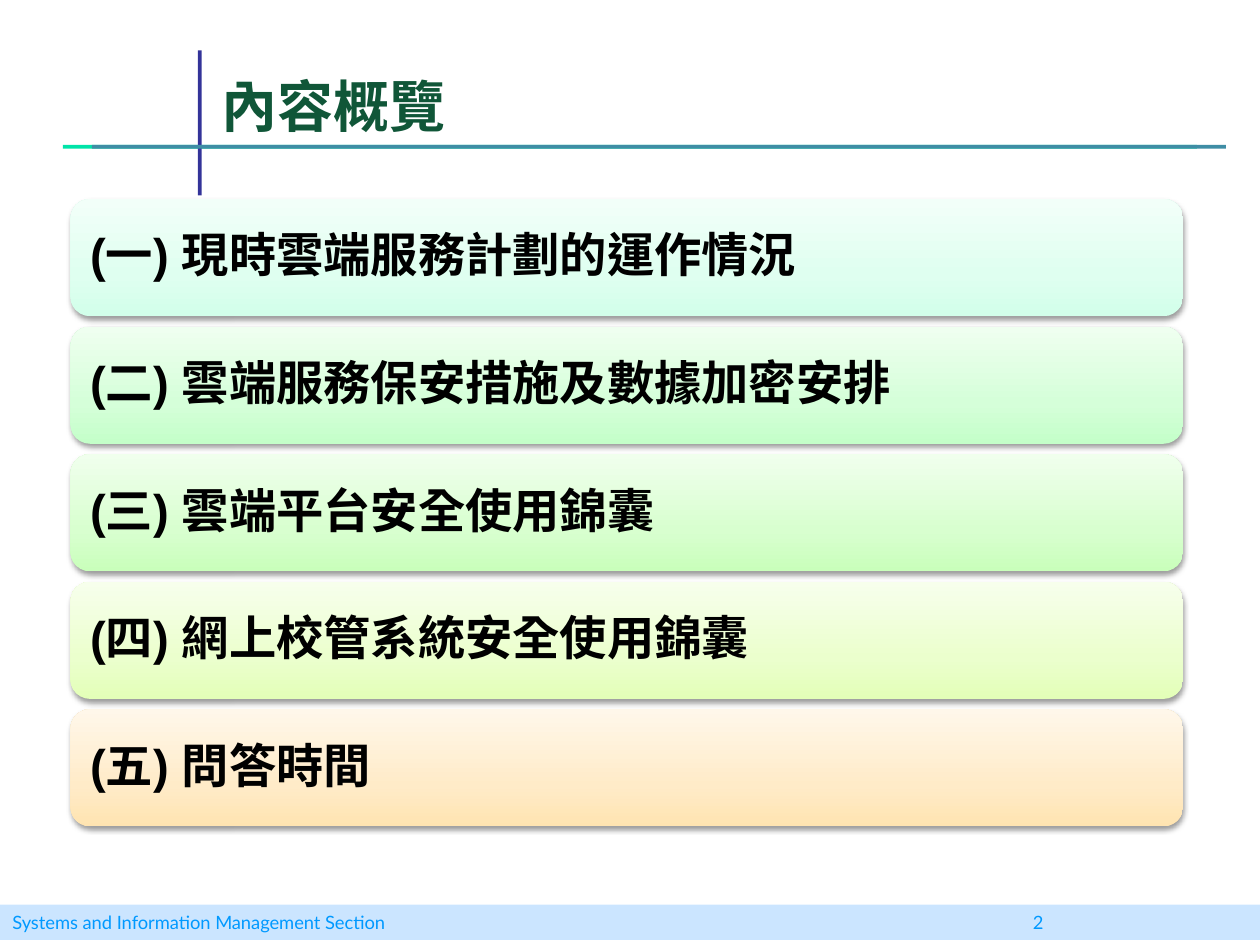
from lxml import etree
from pptx import Presentation
from pptx.dml.color import RGBColor
from pptx.enum.lang import MSO_LANGUAGE_ID as Language
from pptx.enum.shapes import MSO_SHAPE as Shape
from pptx.enum.text import MSO_ANCHOR as Anchor, PP_ALIGN as Align
from pptx.oxml import parse_xml
from pptx.oxml.ns import nsdecls, qn
from pptx.util import Inches, Pt

COLORS = {
    "green": "00E4A8", "indigo": "333399", "teal": "3F8DA5",
    "footer": "99CCFF", "footer_text": "0099FF",
    "title": "105638", "text": "000000", "shadow": "000000",
}
TITLE = "內容概覽"
FOOTER = "Systems and Information Management Section"
PAGE_NUMBER = "2"
NUMBER_TAB = 8.1

# Topic, then its gradient from the bottom edge to the top edge
TOPICS = [
    ("(一) 現時雲端服務計劃的運作情況", ("D2FFEA", "DFFFF0", "F2FFF9")),
    ("(二) 雲端服務保安措施及數據加密安排", ("C4FFC9", "D5FFD9", "EFFFF0")),
    ("(三) 雲端平台安全使用錦囊", ("C9FFBB", "D8FFCF", "F0FFED")),
    ("(四) 網上校管系統安全使用錦囊", ("E3FFB8", "EBFFCD", "F7FFEC")),
    ("(五) 問答時間", ("FFE4B1", "FFEBC8", "FFF7EA")),
]
STOPS = (0, 35, 100)
BAR_LEFT, BAR_WIDTH, BAR_HEIGHT = 0.56, 8.83, 0.93
FIRST_TOP, LAST_TOP = 1.58, 5.63

# Left, top, width, height, colour
RULES = [
    (0.5, 1.15, 9, 0.03, "green"),
    (1.57, 0.4, 0.03, 1.15, "indigo"),
    (0.73, 1.15, 9, 0.03, "teal"),
]


def add_block(page, kind, left, top, width, height, color=None):
    block = page.shapes.add_shape(
        kind, Inches(left), Inches(top), Inches(width), Inches(height))
    block.shadow.inherit = False
    block.line.fill.background()
    if color:
        block.fill.solid()
        block.fill.fore_color.rgb = RGBColor.from_string(COLORS[color])
    return block


def write(box, text, size, color, font="Arial", bold=False, anchor=Anchor.MIDDLE,
          inset=(0.1, 0.05), spacing=None, language=None):
    frame = box.text_frame
    frame.word_wrap = True
    frame.vertical_anchor = anchor
    frame.margin_left = frame.margin_right = Inches(inset[0])
    frame.margin_top = frame.margin_bottom = Inches(inset[1])
    para = frame.paragraphs[0]
    para.alignment = Align.LEFT
    para.line_spacing = spacing
    span = para.add_run()
    span.text = text
    span.font.name = font
    span.font.size = Pt(size)
    span.font.bold = bold
    span.font.color.rgb = RGBColor.from_string(COLORS[color])
    if language:
        span.font.language_id = language
    return para


def add_tab_stop(para, position):
    tabs = etree.SubElement(para._p.get_or_add_pPr(), qn("a:tabLst"))
    etree.SubElement(tabs, qn("a:tab"), pos=str(Inches(position)), algn="l")


def add_gradient(shape, colors):
    stops = "".join(
        f'<a:gs pos="{stop * 1000}"><a:srgbClr val="{color}"/></a:gs>'
        for stop, color in zip(STOPS, colors))
    gradient = parse_xml(
        f'<a:gradFill {nsdecls("a")} rotWithShape="1"><a:gsLst>{stops}</a:gsLst>'
        '<a:lin ang="16200000" scaled="0"/></a:gradFill>')
    shape._element.spPr.find(qn("a:prstGeom")).addnext(gradient)


def add_shadow(shape):
    effects = shape._element.spPr.find(qn("a:effectLst"))
    effects.append(parse_xml(
        f'<a:outerShdw {nsdecls("a")} blurRad="{Pt(3.1)}" dist="{Pt(1.6)}" '
        f'dir="5400000" rotWithShape="0"><a:srgbClr val="{COLORS["shadow"]}">'
        '<a:alpha val="38000"/></a:srgbClr></a:outerShdw>'))


def set_opacity(shape, percent):
    color = shape._element.spPr.find(qn("a:solidFill"))[0]
    etree.SubElement(color, qn("a:alpha"), val=str(percent * 1000))


def main():
    deck = Presentation()
    deck.slide_width, deck.slide_height = Inches(10), Inches(7.5)
    page = deck.slides.add_slide(deck.slide_layouts[6])

    for *place, color in RULES:
        add_block(page, Shape.RECTANGLE, *place, color)

    footer = add_block(page, Shape.RECTANGLE, 0, 7.18, 10, 0.28, "footer")
    set_opacity(footer, 50)
    para = write(footer, f"{FOOTER}\t{PAGE_NUMBER}", 10.5, "footer_text",
                 font="Lato", inset=(0.1, 0))
    add_tab_stop(para, NUMBER_TAB)

    title = page.shapes.add_textbox(Inches(1.66), Inches(0.32), Inches(7.83), Inches(0.83))
    write(title, TITLE, 32, "title", bold=True, anchor=Anchor.BOTTOM,
          language=Language.TRADITIONAL_CHINESE)

    pitch = (LAST_TOP - FIRST_TOP) / (len(TOPICS) - 1)
    for index, (topic, colors) in enumerate(TOPICS):
        bar = add_block(page, Shape.ROUNDED_RECTANGLE, BAR_LEFT,
                        FIRST_TOP + index * pitch, BAR_WIDTH, BAR_HEIGHT)
        add_gradient(bar, colors)
        add_shadow(bar)
        write(bar, topic, 27, "text", bold=True, inset=(0.11, 0.11), spacing=0.9,
              language=Language.TRADITIONAL_CHINESE)

    deck.save("out.pptx")


if __name__ == "__main__":
    main()
